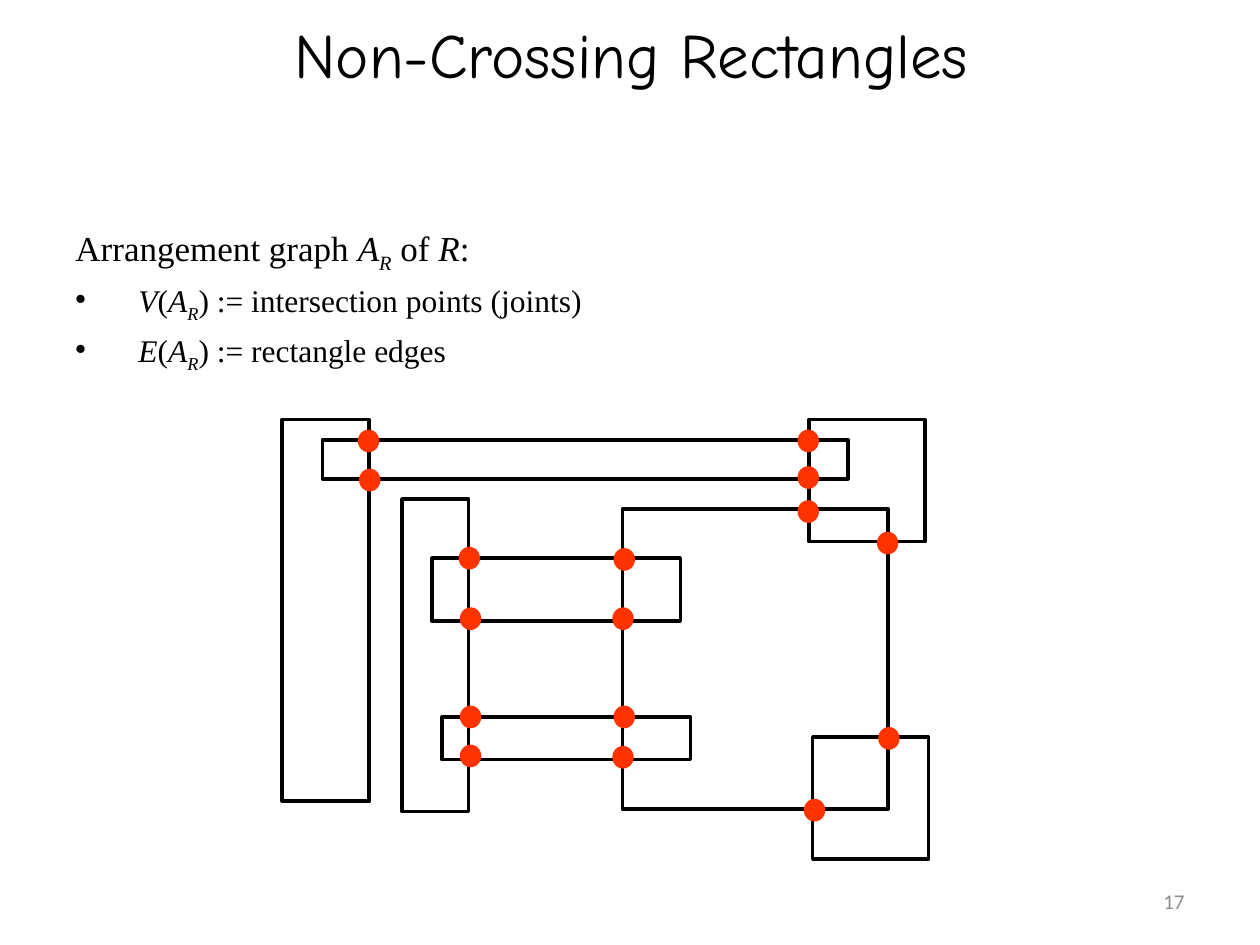
from lxml import etree
from pptx import Presentation
from pptx.dml.color import RGBColor
from pptx.enum.shapes import MSO_SHAPE
from pptx.enum.text import MSO_ANCHOR, PP_ALIGN
from pptx.oxml.ns import qn
from pptx.util import Inches, Pt

RECT, OVAL = MSO_SHAPE.RECTANGLE, MSO_SHAPE.OVAL
TOP, MIDDLE = MSO_ANCHOR.TOP, MSO_ANCHOR.MIDDLE
LEFT, CENTER, RIGHT = PP_ALIGN.LEFT, PP_ALIGN.CENTER, PP_ALIGN.RIGHT

COLORS = {"ink": "000000", "joint": "FF3300", "number": "8C8C8C"}
JOINT_W, JOINT_H = 0.17, 0.18

RECTANGLES = [
    (3.43, 4.43, 1.97, 0.5),
    (2.56, 3.49, 4.17, 0.31),
    (2.24, 3.33, 0.69, 3.03),
    (3.19, 3.96, 0.53, 2.48),
    (6.42, 3.33, 0.92, 0.97),
    (4.94, 4.04, 2.11, 2.38),
    (3.51, 5.69, 1.97, 0.34),
    (6.45, 5.85, 0.92, 0.97),
]
JOINTS = [
    (2.85, 3.72), (2.84, 3.41),
    (3.65, 5.91), (3.65, 5.6), (3.65, 4.82), (3.64, 4.34),
    (4.86, 4.82), (4.87, 4.35), (4.87, 5.6), (4.86, 5.92),
    (6.33, 3.41), (6.33, 3.7), (6.33, 3.97),
    (6.96, 4.22), (6.97, 5.77), (6.38, 6.34),
]
GRAPH = [("A", "italic"), ("R", "sub")]


def rgb(name):
    """Return the named colour."""
    return RGBColor.from_string(COLORS[name])


def add_run(p, text, style="plain", size=18, font="Times New Roman", color="ink"):
    """Append a formatted run to a paragraph."""
    r = p.add_run()
    r.text = text
    r.font.size, r.font.name = Pt(size), font
    r.font.color.rgb = rgb(color)
    r.font.italic = style in ("italic", "sub")
    if style == "sub":
        r._r.get_or_add_rPr().set("baseline", "-25000")


def add_box(s, box, anchor=TOP):
    """Add a wrapping text box and return its text frame."""
    tf = s.shapes.add_textbox(*map(Inches, box)).text_frame
    tf.word_wrap = True
    tf.vertical_anchor = anchor
    return tf


def add_line(s, box, text, align=LEFT, **fmt):
    """Add a text box holding one line."""
    p = add_box(s, box, MIDDLE).paragraphs[0]
    p.alignment = align
    add_run(p, text, **fmt)


def format_paragraph(p, bullet):
    """Set the hanging indent, spacing and bullet of a paragraph."""
    p.space_before = Pt(4)
    pPr = p._p.get_or_add_pPr()
    pPr.set("marL", str(Inches(0.5)))
    pPr.set("indent", str(Inches(-0.5)))
    if bullet:
        etree.SubElement(pPr, qn("a:buChar")).set("char", "•")


def add_definitions(s):
    """Add the definition of the arrangement graph."""
    lines = [
        (20, False, [("Arrangement graph ", "plain"), *GRAPH,
                     (" of ", "plain"), ("R", "italic"), (":", "plain")]),
        (18, True, [("V", "italic"), ("(", "plain"), *GRAPH,
                    (") := intersection points (joints)", "plain")]),
        (18, True, [("E", "italic"), ("(", "plain"), *GRAPH,
                    (") := rectangle edges", "plain")]),
    ]
    tf = add_box(s, (0.5, 1.75, 7.65, 1.61))
    for i, (size, bullet, runs) in enumerate(lines):
        p = tf.add_paragraph() if i else tf.paragraphs[0]
        format_paragraph(p, bullet)
        for text, style in runs:
            add_run(p, text, style, size=size)


def add_shape(group, kind, box, fill=None, line=None):
    """Add a filled or outlined shape to a group."""
    sp = group.shapes.add_shape(kind, *map(Inches, box))
    sp.shadow.inherit = False
    if fill:
        sp.fill.solid()
        sp.fill.fore_color.rgb = rgb(fill)
    else:
        sp.fill.background()
    if line:
        sp.line.color.rgb = rgb(line)
        sp.line.width = Pt(2)
    else:
        sp.line.fill.background()


def main():
    """Build the slide and save it."""
    prs = Presentation()
    prs.slide_width, prs.slide_height = Inches(10), Inches(7.5)
    s = prs.slides.add_slide(prs.slide_layouts[6])
    add_line(s, (0.51, 0, 9, 0.84), "Non-Crossing Rectangles", CENTER,
             size=36, font="Comic Neue")
    add_definitions(s)
    rectangles = s.shapes.add_group_shape()
    for box in RECTANGLES:
        add_shape(rectangles, RECT, box, line="ink")
    joints = s.shapes.add_group_shape()
    for x, y in JOINTS:
        add_shape(joints, OVAL, (x, y, JOINT_W, JOINT_H), fill="joint")
    add_line(s, (7.17, 6.95, 2.33, 0.4), "17", RIGHT,
             size=12, font="Calibri", color="number")
    prs.save("out.pptx")


if __name__ == "__main__":
    main()
